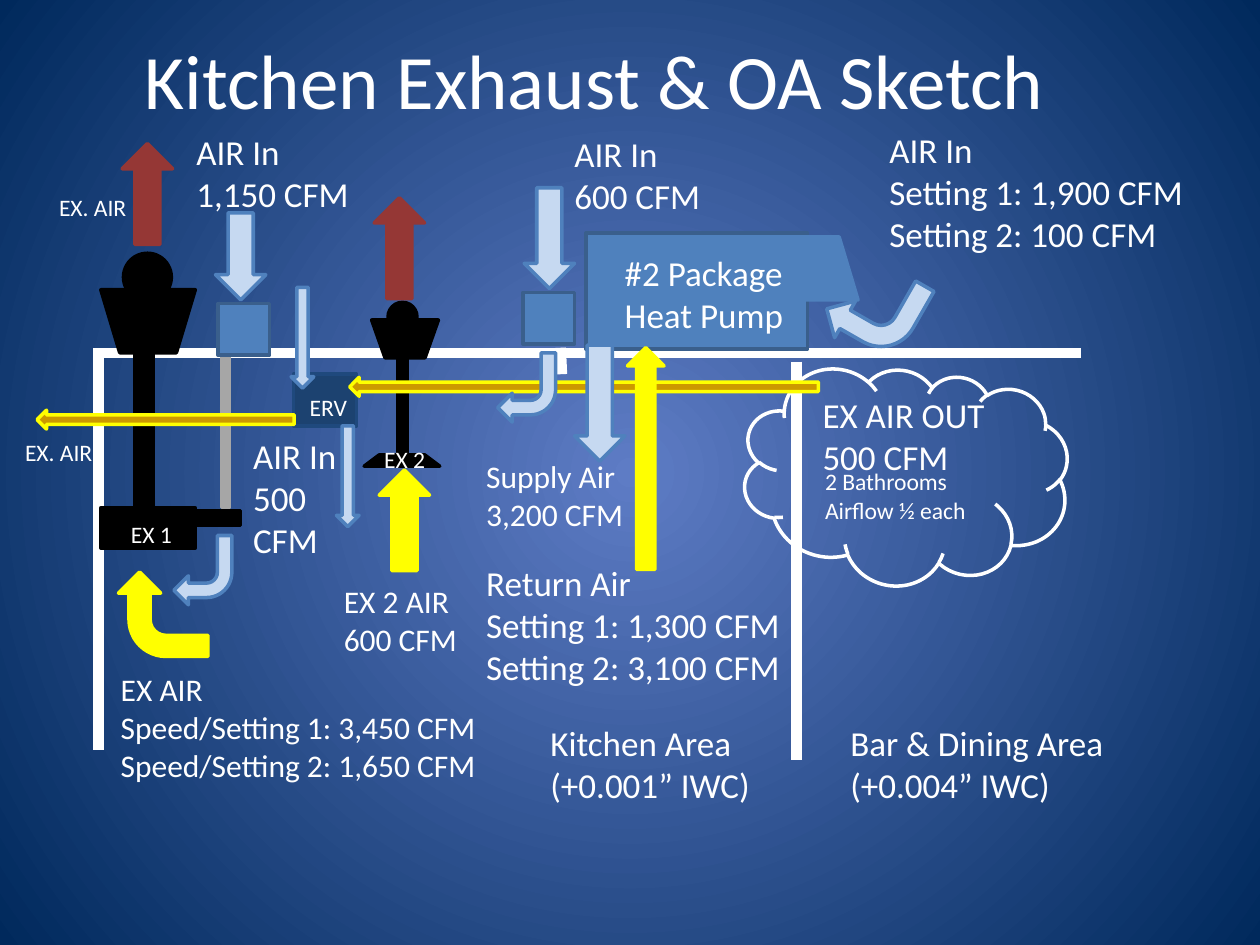
from lxml.etree import SubElement
from pptx import Presentation
from pptx.dml.color import RGBColor
from pptx.enum.shapes import MSO_CONNECTOR, MSO_SHAPE
from pptx.enum.text import MSO_ANCHOR, MSO_AUTO_SIZE, PP_ALIGN
from pptx.oxml.ns import qn
from pptx.util import Pt

SCALE = 9144
FONT = "Calibri"
WHITE = "FFFFFF"
BLACK = ("000000", "000000")
RED = ("953735", "953735")
YELLOW = ("FFFF00", "FFFF00")
GOLD = ("CC9900", "FFFF00")
PALE = ("C6D9F1", "4F81BD")
GREY = ("A6A6A6", "A6A6A6")
BLUE = ("4F81BD", "3A5F8C")
DUCT = ("4F81BD", "4F81BD")
NAVY = ("1C4270", "1F497D")
CLEAR = (None, WHITE)

RECT = MSO_SHAPE.RECTANGLE
HOOD = MSO_SHAPE.FLOWCHART_MANUAL_OPERATION
BALL = MSO_SHAPE.FLOWCHART_CONNECTOR
ARROW = MSO_SHAPE.UP_ARROW
BEND = MSO_SHAPE.BENT_ARROW
CLOUD = MSO_SHAPE.CLOUD

WALLS = [
    (74, 280, 858, 280),
    (78, 278, 78, 595),
    (632, 287, 632, 603),
    (445, 276, 446, 297),
]

PARTS = [
    (HOOD, (80, 230, 75, 50), BLACK, 0),
    (BALL, (98, 201, 38, 38), BLACK, 0),
    (HOOD, (295, 254, 53, 30), BLACK, 0),
    (BALL, (308, 240, 23, 23), BLACK, 0),
    (RECT, (107, 274, 15, 129), BLACK, 0),
    (RECT, (316, 277, 7, 83), BLACK, 0),
    (HOOD, (289, 361, 60, 9), BLACK, 180),
    (RECT, (80, 403, 75, 32), BLACK, 0),
    (RECT, (151, 405, 40, 12), BLACK, 0),
    (RECT, (176, 283, 6, 120), GREY, 0),
    (RECT, (233, 297, 50, 41), NAVY, 0),
    (RECT, (465, 185, 176, 92), BLUE, 0),
    (HOOD, (606, 188, 75, 50), DUCT, 180),
    (RECT, (173, 241, 41, 41), BLUE, 0),
    (RECT, (415, 232, 41, 41), BLUE, 0),
    (CLOUD, (590, 291, 257, 174), CLEAR, 13),
]

FLOWS = [
    (ARROW, (97, 114, 40, 80), RED, 0),
    (ARROW, (297, 157, 40, 80), RED, 0),
    (BEND, (138, 425, 46, 55), PALE, 180),
    (ARROW, (301, 373, 40, 80), YELLOW, 0),
    (ARROW, (171, 169, 40, 69), PALE, 180),
    (BEND, (96, 452, 67, 71), YELLOW, 270),
    (ARROW, (456, 121, 15, 372), GOLD, 270),
    (ARROW, (231, 228, 18, 80), PALE, 180),
    (ARROW, (124, 231, 15, 204), GOLD, 270),
    (ARROW, (267, 338, 18, 80), PALE, 180),
    (BEND, (661, 210, 67, 71), PALE, 209.8),
    (ARROW, (498, 276, 29, 176), YELLOW, 0),
    (ARROW, (456, 274, 40, 92), PALE, 180),
    (ARROW, (416, 149, 40, 80), PALE, 180),
    (BEND, (395, 280, 46, 55), PALE, 180),
]

LOOSE = [
    ((86, 527, 306, 101), 18,
     "EX AIR\nSpeed/Setting 1: 3,450 CFM\nSpeed/Setting 2: 1,650 CFM"),
    ((263, 457, 111, 71), 18, "EX 2 AIR\n600 CFM"),
    ((645, 366, 134, 56), 13.5, "2 Bathrooms\nAirflow ½ each"),
    ((643, 307, 150, 77), 20, "EX AIR OUT\n500 CFM"),
    ((10, 343, 78, 33), 13.5, "EX. AIR"),
    ((37, 148, 78, 33), 13.5, "EX. AIR"),
    ((696, 97, 256, 111), 20, "AIR In\nSetting 1: 1,900 CFM\nSetting 2: 100 CFM"),
    ((146, 99, 142, 77), 20, "AIR In\n1,150 CFM"),
    ((427, 568, 180, 118), 20, "Kitchen Area\n(+0.001” IWC)"),
]

WRAPPED = [
    ((236, 307, 57, 33), 13.5, "ERV"),
    ((94, 408, 57, 33), 13.5, "EX 1"),
    ((295, 348, 57, 33), 13.5, "EX 2"),
    ((191, 340, 89, 111), 20, "AIR In\n500 CFM"),
    ((486, 195, 167, 77), 20, "#2 Package Heat Pump"),
    ((446, 100, 142, 77), 20, "AIR In\n600 CFM"),
    ((665, 568, 279, 77), 20, "Bar & Dining Area\n(+0.004” IWC)"),
]


def px(*nums):
    return [n * SCALE for n in nums]


def paint(color, code):
    color.rgb = RGBColor.from_string(code)


def style(paras, size):
    for para in paras:
        for run in para.runs:
            run.font.name = FONT
            run.font.size = Pt(size)
            paint(run.font.color, WHITE)


def backdrop(slide):
    fill = slide.background.fill
    fill.gradient()
    for stop, pos, code in zip(fill.gradient_stops, (0, 1), ("5E7CC5", "00295C")):
        stop.position = pos
        paint(stop.color, code)
    grad = slide.element.find(".//" + qn("a:gradFill"))
    lin = grad.find(qn("a:lin"))
    if lin is not None:
        grad.remove(lin)
    ring = SubElement(grad, qn("a:path"), {"path": "circle"})
    SubElement(ring, qn("a:fillToRect"), dict.fromkeys("ltrb", "50000"))


def heading(slide, box, text):
    title = slide.shapes.title
    title.left, title.top, title.width, title.height = px(*box)
    frame = title.text_frame
    frame.text = text
    frame.vertical_anchor = MSO_ANCHOR.MIDDLE
    frame.paragraphs[0].alignment = PP_ALIGN.CENTER
    style(frame.paragraphs, 44)


def wall(slide, ends):
    line = slide.shapes.add_connector(MSO_CONNECTOR.STRAIGHT, *px(*ends))
    paint(line.line.color, WHITE)
    line.line.width = Pt(6)
    SubElement(line.element.spPr, qn("a:effectLst"))


def part(slide, kind, box, tones, turn):
    shape = slide.shapes.add_shape(kind, *px(*box))
    shape.shadow.inherit = False
    shape.rotation = turn
    fill, edge = tones
    if fill:
        shape.fill.solid()
        paint(shape.fill.fore_color, fill)
    else:
        shape.fill.background()
    paint(shape.line.color, edge)
    shape.line.width = Pt(2)


def label(slide, box, size, text, wrap=False):
    frame = slide.shapes.add_textbox(*px(*box)).text_frame
    frame.word_wrap = wrap
    frame.auto_size = MSO_AUTO_SIZE.SHAPE_TO_FIT_TEXT
    frame.text = text
    style(frame.paragraphs, size)
    return frame.paragraphs


def main():
    deck = Presentation()
    deck.slide_width, deck.slide_height = px(1000, 750)
    slide = deck.slides.add_slide(deck.slide_layouts[5])
    backdrop(slide)
    heading(slide, (22, 0, 900, 125), "Kitchen Exhaust & OA Sketch")
    for ends in WALLS:
        wall(slide, ends)
    for item in PARTS + FLOWS:
        part(slide, *item)
    for item in LOOSE:
        label(slide, *item)
    for item in WRAPPED:
        label(slide, *item, wrap=True)
    paras = label(slide, (376, 358, 256, 194), 18,
                  "Supply Air\n3,200 CFM\nReturn Air\n"
                  "Setting 1: 1,300 CFM\nSetting 2: 3,100 CFM")
    style(paras[2:], 20)
    paras[2].space_before = Pt(16.5)
    deck.save("out.pptx")


if __name__ == "__main__":
    main()
